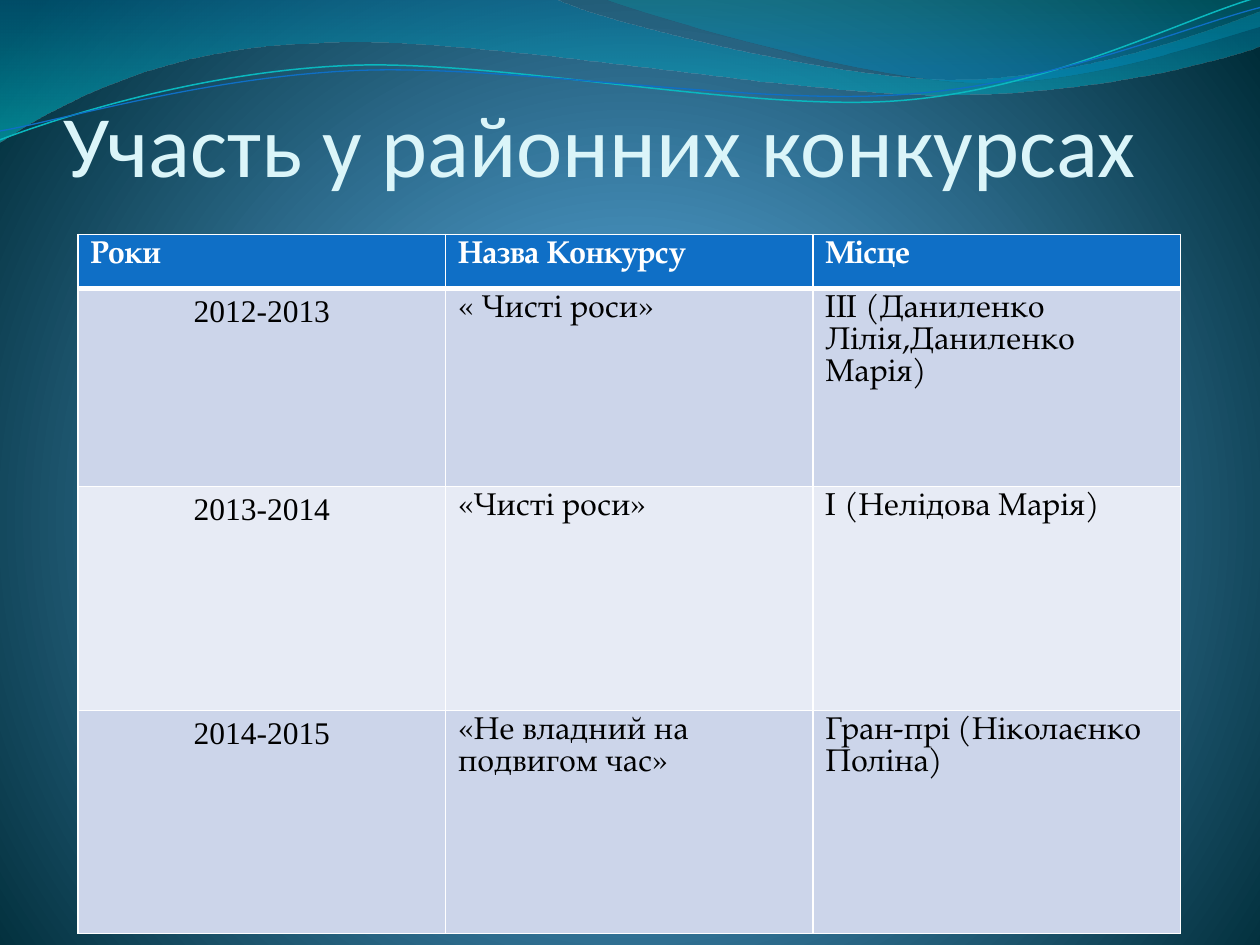
from dataclasses import dataclass

from lxml.etree import SubElement
from pptx import Presentation
from pptx.dml.color import RGBColor
from pptx.enum.text import MSO_ANCHOR, PP_ALIGN
from pptx.oxml import parse_xml
from pptx.oxml.ns import nsdecls, qn
from pptx.util import Inches, Pt


@dataclass(frozen=True)
class Theme:
    title: str = "DBF5F9"
    header: str = "0F6FC6"
    bands: tuple = ("CCD5EA", "E7EBF5")
    border: str = "FFFFFF"
    header_text: str = "FFFFFF"
    body_text: str = "000000"
    title_font: str = "Calibri"
    table_font: str = "TeX Gyre Pagella"
    year_font: str = "Times New Roman"
    title_size: int = 50
    table_size: int = 18


THEME = Theme()
UNITS_PER_INCH = 100
BACKGROUND_STOPS = [(0, "4AA0D6", 100), (25, "4C98C7", 100), (100, "002C38", 100)]
BACKGROUND_DIRECTION = (
    '<a:path path="circle"><a:fillToRect l="10000" t="110000" r="10000" b="100000"/></a:path>'
)
DOWNWARD = '<a:lin ang="5400000" scaled="0"/>'

WIDE_WAVE = [
    [(0, 0)], [(4.4, -0.01)],
    [(4.76, 0.17), (6.64, 0.63), (7.58, 0.63)],
    [(8.53, 0.63), (9.58, 0.26), (10, 0.09)],
    [(10.01, 0.36)],
    [(9.83, 0.44), (8.7, 0.76), (7.46, 0.75)],
    [(6.22, 0.75), (3.82, 0.28), (2.57, 0.34)],
    [(1.29, 0.36), (0.46, 0.83), (-0.01, 1.13)],
    [(0, 0)],
]
RIGHT_WAVE = [
    [(4.79, -0.01)],
    [(5.09, 0.11), (6.82, 0.62), (7.69, 0.65)],
    [(8.56, 0.69), (9.61, 0.32), (10, 0.21)],
    [(10, 0)], [(4.79, -0.01)],
]
TEAL_LINE = [
    [(0, 1.11)],
    [(0.48, 0.93), (1.58, 0.57), (2.77, 0.52)],
    [(3.95, 0.47), (5.93, 0.89), (7.13, 0.8)],
    [(8.33, 0.71), (9.38, 0.15), (9.98, -0.02)],
]
BLUE_LINE = [
    [(0, 1.04)],
    [(0.47, 0.96), (1.64, 0.61), (2.83, 0.56)],
    [(4.03, 0.51), (5.97, 0.84), (7.17, 0.75)],
    [(8.36, 0.67), (9.41, 0.21), (10, 0.06)],
]
CONTESTS = [
    ("Роки", "Назва Конкурсу", "Місце"),
    ("2012-2013", "« Чисті роси»", "III (Даниленко Лілія,Даниленко Марія)"),
    ("2013-2014", "«Чисті роси»", "I (Нелідова Марія)"),
    ("2014-2015", "«Не владний на подвигом час»", "Гран-прі (Ніколаєнко Поліна)"),
]
ROW_HEIGHTS = (0.43, 1.57, 1.78, 1.77)


def color(value):
    return RGBColor.from_string(value)


def set_gradient(fill, properties, stops, direction):
    fill.solid()
    stop_xml = "".join(
        f'<a:gs pos="{position * 1000}"><a:srgbClr val="{value}">'
        f'<a:alpha val="{opacity * 1000}"/></a:srgbClr></a:gs>'
        for position, value, opacity in stops
    )
    gradient = parse_xml(
        f'<a:gradFill {nsdecls("a")} rotWithShape="1"><a:gsLst>{stop_xml}</a:gsLst>{direction}</a:gradFill>'
    )
    properties.replace(properties.find(qn("a:solidFill")), gradient)


def bend_segments(shape, segments, origin):
    lines = list(shape.element.spPr.iter(qn("a:lnTo")))
    for line, segment in zip(lines, segments[1:]):
        if len(segment) == 3:
            points = "".join(
                f'<a:pt x="{x - origin[0]}" y="{y - origin[1]}"/>' for x, y in segment
            )
            curve = parse_xml(f'<a:cubicBezTo {nsdecls("a")}>{points}</a:cubicBezTo>')
            line.getparent().replace(line, curve)


def add_outline(slide, segments, closed):
    scaled = [
        [(round(x * UNITS_PER_INCH), round(y * UNITS_PER_INCH)) for x, y in segment]
        for segment in segments
    ]
    anchors = [segment[-1] for segment in scaled]
    origin = [min(values) for values in zip(*anchors)]
    builder = slide.shapes.build_freeform(*anchors[0], scale=Inches(1) / UNITS_PER_INCH)
    builder.add_line_segments(anchors[1:], close=closed)
    shape = builder.convert_to_shape()
    bend_segments(shape, scaled, origin)
    shape.shadow.inherit = False
    return shape


def add_wave(slide, segments, stops):
    shape = add_outline(slide, segments, True)
    set_gradient(shape.fill, shape.element.spPr, stops, DOWNWARD)
    shape.line.fill.background()


def add_wave_line(slide, segments, line_color, width):
    shape = add_outline(slide, segments, False)
    shape.fill.background()
    shape.line.color.rgb = color(line_color)
    shape.line.width = Pt(width)


def set_font(paragraph, name, size, font_color, bold=False):
    paragraph.font.name = name
    paragraph.font.size = Pt(size)
    paragraph.font.color.rgb = color(font_color)
    paragraph.font.bold = bold


def place_title(slide, text):
    title = slide.shapes.title
    title.left, title.top = Inches(0.5), Inches(0.3)
    title.width, title.height = Inches(9), Inches(1.25)
    frame = title.text_frame
    frame.text = text
    frame.vertical_anchor = MSO_ANCHOR.BOTTOM
    frame.margin_left = frame.margin_right = frame.margin_bottom = 0
    frame.margin_top = Inches(0.05)
    paragraph = frame.paragraphs[0]
    paragraph.alignment = PP_ALIGN.LEFT
    set_font(paragraph, THEME.title_font, THEME.title_size, THEME.title)
    slide.shapes.element.append(title.element)


def set_borders(cell, top, bottom):
    properties = cell._tc.get_or_add_tcPr()
    widths = {"a:lnL": 1, "a:lnR": 1, "a:lnT": top, "a:lnB": bottom}
    for index, (tag, width) in enumerate(widths.items()):
        line = SubElement(properties, qn(tag), w=str(Pt(width)))
        fill = SubElement(line, qn("a:solidFill"))
        SubElement(fill, qn("a:srgbClr"), val=THEME.border)
        properties.insert(index, line)


def format_cell(cell, text, row, column):
    is_header = row == 0
    is_year = column == 0 and not is_header
    cell.text = text
    paragraph = cell.text_frame.paragraphs[0]
    paragraph.alignment = PP_ALIGN.CENTER if is_year else PP_ALIGN.LEFT
    set_font(
        paragraph,
        THEME.year_font if is_year else THEME.table_font,
        THEME.table_size,
        THEME.header_text if is_header else THEME.body_text,
        is_header,
    )
    cell.fill.solid()
    cell.fill.fore_color.rgb = color(THEME.header if is_header else THEME.bands[(row - 1) % 2])
    set_borders(cell, top=3 if row == 1 else 1, bottom=3 if is_header else 1)


def add_contest_table(slide):
    table = slide.shapes.add_table(
        len(CONTESTS), len(CONTESTS[0]),
        Inches(0.62), Inches(1.86), Inches(8.75), Inches(sum(ROW_HEIGHTS)),
    ).table
    for row, (height, texts) in enumerate(zip(ROW_HEIGHTS, CONTESTS)):
        table.rows[row].height = Inches(height)
        for column, text in enumerate(texts):
            format_cell(table.cell(row, column), text, row, column)


def main():
    presentation = Presentation()
    presentation.slide_width, presentation.slide_height = Inches(10), Inches(7.5)
    slide = presentation.slides.add_slide(presentation.slide_layouts[5])
    background_fill = slide.background.fill
    background_fill.solid()
    background_properties = slide.element.cSld.find(qn("p:bg")).find(qn("p:bgPr"))
    set_gradient(background_fill, background_properties, BACKGROUND_STOPS, BACKGROUND_DIRECTION)
    add_wave(slide, WIDE_WAVE, [(0, "0074A1", 45), (100, "00C6CF", 55)])
    add_wave(slide, RIGHT_WAVE, [(0, "00A1A9", 30), (80, "008BBF", 45)])
    add_wave_line(slide, TEAL_LINE, "0AB8BF", 0.85)
    add_wave_line(slide, BLUE_LINE, "0F6FC6", 0.75)
    place_title(slide, "Участь у районних конкурсах")
    add_contest_table(slide)
    presentation.save("out.pptx")


if __name__ == "__main__":
    main()
